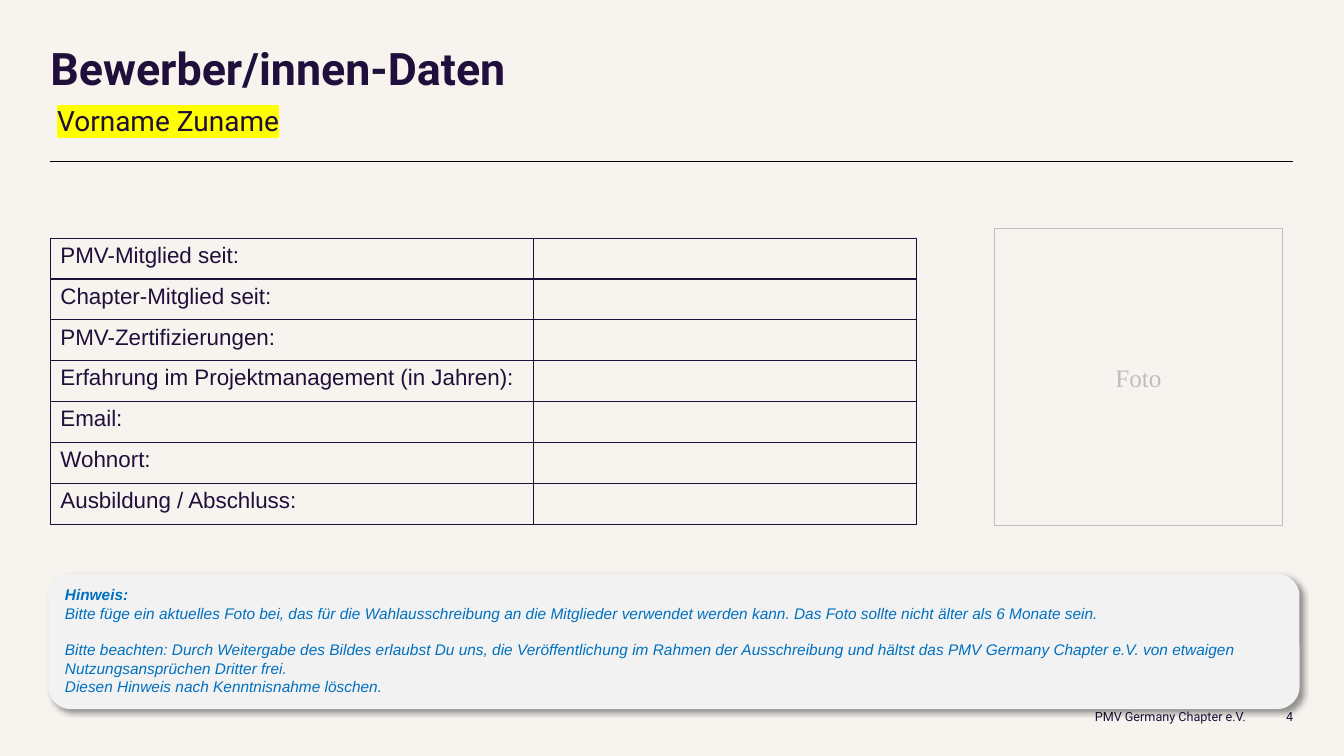
from lxml import etree
from pptx import Presentation
from pptx.dml.color import RGBColor
from pptx.enum.shapes import MSO_CONNECTOR, MSO_SHAPE
from pptx.enum.text import MSO_ANCHOR as Anchor, PP_ALIGN as Align
from pptx.oxml import parse_xml
from pptx.oxml.ns import nsdecls, qn
from pptx.util import Cm, Pt

CREAM = RGBColor(0xF7, 0xF4, 0xEF)
INDIGO = RGBColor(0x20, 0x0F, 0x3B)
BLACK = RGBColor(0x00, 0x00, 0x00)
SILVER = RGBColor(0xBF, 0xBF, 0xBF)
PALE_GREY = RGBColor(0xF2, 0xF2, 0xF2)
BLUE = RGBColor(0x00, 0x70, 0xC0)
YELLOW = RGBColor(0xFF, 0xFF, 0x00)

LEFT, WIDTH = 1.27, 31.32
ROW_HEIGHT = 1.03
COLUMN_WIDTHS = (12.17, 9.65)
FIELDS = (
    "PMV-Mitglied seit:",
    "Chapter-Mitglied seit:",
    "PMV-Zertifizierungen:",
    "Erfahrung im Projektmanagement (in Jahren):",
    "Email:",
    "Wohnort:",
    "Ausbildung / Abschluss:",
)
NOTES = (
    "Hinweis:",
    "Bitte füge ein aktuelles Foto bei, das für die Wahlausschreibung an die Mitglieder "
    "verwendet werden kann. Das Foto sollte nicht älter als 6 Monate sein.",
    "Bitte beachten: Durch Weitergabe des Bildes erlaubst Du uns, die Veröffentlichung im "
    "Rahmen der Ausschreibung und hältst das PMV Germany Chapter e.V. von etwaigen "
    "Nutzungsansprüchen Dritter frei.",
    "Diesen Hinweis nach Kenntnisnahme löschen.",
)


class SlideBuilder:
    def __init__(self, slide, heading_font="Roboto", body_font="Arial"):
        self.slide = slide
        self.heading_font = heading_font
        self.body_font = body_font

    def background(self, color):
        fill = self.slide.background.fill
        fill.solid()
        fill.fore_color.rgb = color

    def set_text(self, paragraph, text, size, color, font=None, bold=False, italic=False):
        paragraph.text = text
        style = paragraph.font
        style.name = font or self.body_font
        style.size = Pt(size)
        style.bold = bold
        style.italic = italic
        style.color.rgb = color

    def label(self, box, text, size, align=Align.LEFT, anchor=Anchor.TOP, bold=False):
        frame = self.slide.shapes.add_textbox(*map(Cm, box)).text_frame
        frame.word_wrap = True
        frame.vertical_anchor = anchor
        frame.margin_left = frame.margin_right = frame.margin_top = frame.margin_bottom = 0
        paragraph = frame.paragraphs[0]
        self.set_text(paragraph, text, size, INDIGO, self.heading_font, bold)
        paragraph.alignment = align
        return paragraph

    def highlight(self, paragraph, color):
        properties = paragraph.runs[0].font._element
        mark = etree.SubElement(properties, qn("a:highlight"))
        etree.SubElement(mark, qn("a:srgbClr"), val=str(color))

    def rule(self, left, top, width):
        line = self.slide.shapes.add_connector(
            MSO_CONNECTOR.STRAIGHT, Cm(left), Cm(top), Cm(left + width), Cm(top))
        line.line.color.rgb = BLACK
        line.line.width = Pt(0.5)
        etree.SubElement(line._element.spPr, qn("a:effectLst"))

    def panel(self, kind, box, anchor, fill=None, outline=None):
        shape = self.slide.shapes.add_shape(kind, *map(Cm, box))
        shape.shadow.inherit = False
        if fill is None:
            shape.fill.background()
        else:
            shape.fill.solid()
            shape.fill.fore_color.rgb = fill
        if outline is None:
            shape.line.fill.background()
        else:
            shape.line.color.rgb = outline
            shape.line.width = Pt(0.75)
        shape.text_frame.word_wrap = True
        shape.text_frame.vertical_anchor = anchor
        return shape

    def drop_shadow(self, shape):
        effects = shape._element.spPr.find(qn("a:effectLst"))
        effects.append(parse_xml(
            f'<a:outerShdw {nsdecls("a")} blurRad="{Pt(4)}" dist="{Pt(3)}" dir="2700000" '
            'algn="tl" rotWithShape="0"><a:srgbClr val="000000"><a:alpha val="40000"/>'
            '</a:srgbClr></a:outerShdw>'))

    def border(self, cell, color):
        properties = cell._tc.get_or_add_tcPr()
        for index, side in enumerate(("lnL", "lnR", "lnT", "lnB")):
            properties.insert(index, parse_xml(
                f'<a:{side} {nsdecls("a")} w="{Pt(1)}"><a:solidFill>'
                f'<a:srgbClr val="{color}"/></a:solidFill></a:{side}>'))

    def form_table(self, left, top, fields):
        table = self.slide.shapes.add_table(
            len(fields), len(COLUMN_WIDTHS), Cm(left), Cm(top),
            Cm(sum(COLUMN_WIDTHS)), Cm(ROW_HEIGHT * len(fields))).table
        table.first_row = table.horz_banding = False
        for column, width in zip(table.columns, COLUMN_WIDTHS):
            column.width = Cm(width)
        for row, field in zip(table.rows, fields):
            row.height = Cm(ROW_HEIGHT)
            for cell in row.cells:
                cell.fill.background()
                self.border(cell, INDIGO)
            self.set_text(row.cells[0].text_frame.paragraphs[0], field, 16, INDIGO)


def main():
    presentation = Presentation()
    presentation.slide_width, presentation.slide_height = Cm(33.87), Cm(19.05)
    slide = presentation.slides.add_slide(presentation.slide_layouts[6])
    builder = SlideBuilder(slide)
    builder.background(CREAM)

    # Footer
    builder.label((31.39, 17.04, 1.2, 2.01), "4", 9, Align.RIGHT, Anchor.MIDDLE)
    builder.label((23.83, 17.04, 7.56, 2.01), "PMV Germany Chapter e.V.", 9,
                  Align.RIGHT, Anchor.MIDDLE)

    # Heading
    builder.rule(LEFT, 4.06, WIDTH)
    title = builder.label((LEFT, 1.19, WIDTH, 1.22), "Bewerber/innen-Daten", 32, bold=True)
    title.line_spacing = 0.9
    name = builder.label((1.44, 2.6, 31.15, 0.86), "Vorname Zuname", 20)
    builder.highlight(name, YELLOW)

    # Applicant data and photo frame
    builder.form_table(LEFT, 6, FIELDS)
    photo = builder.panel(MSO_SHAPE.RECTANGLE, (25.06, 5.75, 7.26, 7.5), Anchor.MIDDLE,
                          outline=SILVER)
    caption = photo.text_frame.paragraphs[0]
    builder.set_text(caption, "Foto", 18, SILVER, "Times New Roman")
    caption.alignment = Align.CENTER

    # Note box
    note = builder.panel(MSO_SHAPE.ROUNDED_RECTANGLE, (1.22, 14.46, 31.53, 3.41), Anchor.TOP,
                         fill=PALE_GREY)
    builder.drop_shadow(note)
    frame = note.text_frame
    for index, text in enumerate(NOTES):
        paragraph = frame.add_paragraph() if index else frame.paragraphs[0]
        builder.set_text(paragraph, text, 11, BLUE, bold=index == 0, italic=True)
        paragraph.alignment = Align.LEFT
    frame.paragraphs[1].space_after = Pt(13)

    presentation.save("out.pptx")


if __name__ == "__main__":
    main()
